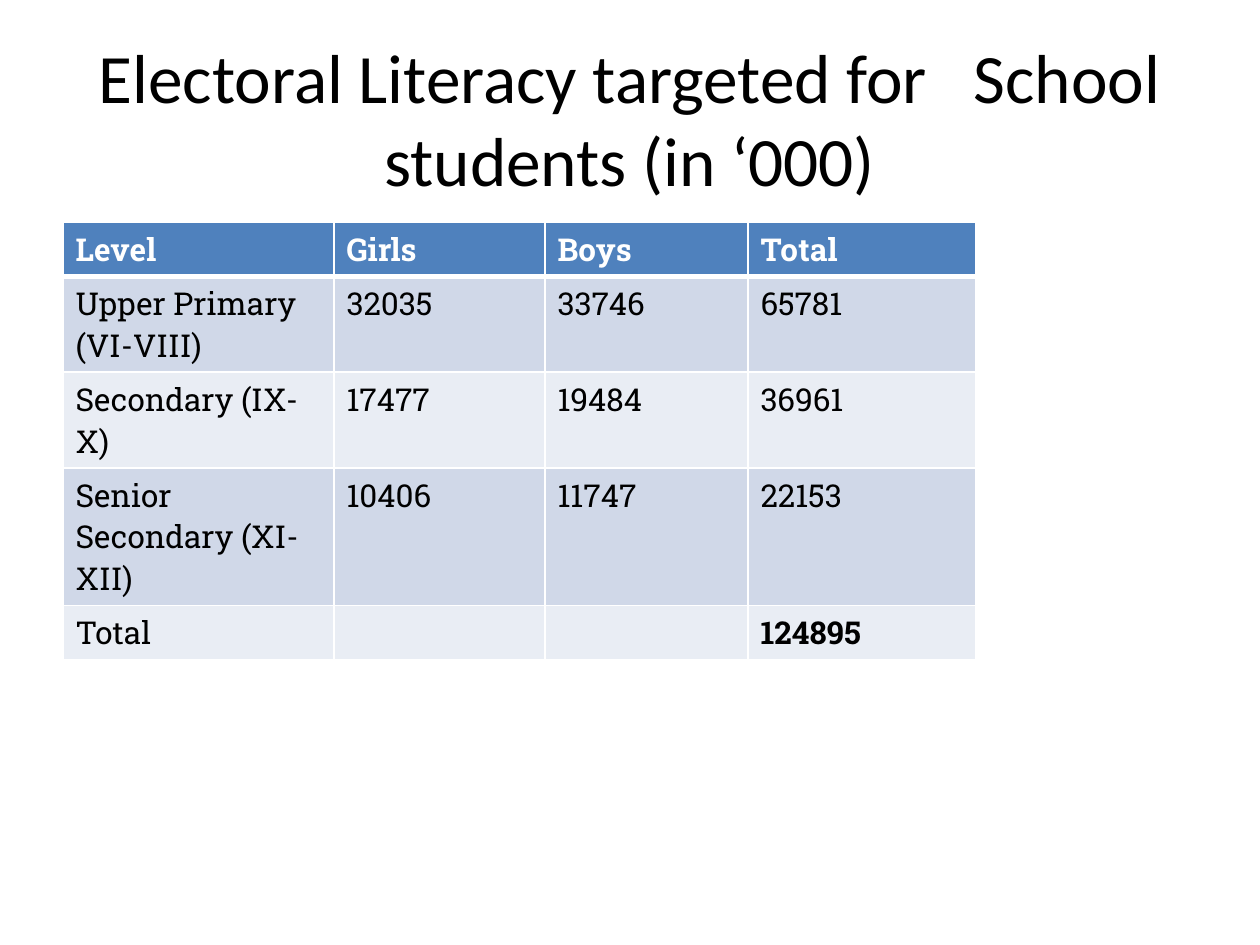
from lxml import etree
from pptx import Presentation
from pptx import util as u
from pptx.dml.color import RGBColor
from pptx.enum import text
from pptx.oxml import ns

SCALE = 914400 // 126
TITLE_FONT = "Calibri"
TABLE_FONT = "Roboto Slab"
WHITE = RGBColor(0xFF, 0xFF, 0xFF)
BLACK = RGBColor(0x00, 0x00, 0x00)
HEADER_BLUE = RGBColor(0x4F, 0x81, 0xBD)
BANDS = [RGBColor(0xD0, 0xD8, 0xE8), RGBColor(0xE9, 0xED, 0xF4)]

TITLE = "Electoral Literacy targeted for   School students (in ‘000)"
COLUMN_WIDTHS = [271, 211, 203, 228]
ROW_HEIGHT = 52
ROWS = [
    ["Level", "Girls", "Boys", "Total"],
    ["Upper Primary (VI-VIII)", "32035", "33746", "65781"],
    ["Secondary (IX-X)", "17477", "19484", "36961"],
    ["Senior Secondary (XI-XII)", "10406", "11747", "22153"],
    ["Total", "", "", "124895"],
]


def px(length):
    return u.Emu(length * SCALE)


def format_font(font, name, size, color, bold=False):
    font.name = name
    font.size = u.Pt(size)
    font.color.rgb = color
    font.bold = bold


def set_borders(cell, bottom_width):
    properties = cell._tc.get_or_add_tcPr()
    widths = {"lnL": 1, "lnR": 1, "lnT": 1, "lnB": bottom_width}
    for index, (side, width) in enumerate(widths.items()):
        line = etree.Element(ns.qn(f"a:{side}"), w=str(u.Pt(width)))
        fill = etree.SubElement(line, ns.qn("a:solidFill"))
        etree.SubElement(fill, ns.qn("a:srgbClr"), val=str(WHITE))
        properties.insert(index, line)


def add_title(slide, left, top, width, height):
    title = slide.shapes.title
    title.left, title.top = px(left), px(top)
    title.width, title.height = px(width), px(height)
    frame = title.text_frame
    frame.word_wrap = True
    frame.auto_size = text.MSO_AUTO_SIZE.NONE
    frame.vertical_anchor = text.MSO_ANCHOR.MIDDLE
    paragraph = frame.paragraphs[0]
    paragraph.alignment = text.PP_ALIGN.CENTER
    run = paragraph.add_run()
    run.text = TITLE
    format_font(run.font, TITLE_FONT, 39.6, BLACK)


def fill_cell(cell, value, fill, color, bold, bottom_width):
    cell.fill.solid()
    cell.fill.fore_color.rgb = fill
    set_borders(cell, bottom_width)
    paragraph = cell.text_frame.paragraphs[0]
    if value:
        run = paragraph.add_run()
        run.text = value
        format_font(run.font, TABLE_FONT, 18, color, bold)
    else:
        format_font(paragraph.font, TABLE_FONT, 18, color)


def add_student_table(slide, left, top, width, height):
    shape = slide.shapes.add_table(
        len(ROWS), len(COLUMN_WIDTHS), px(left), px(top), px(width), px(height))
    table = shape.table
    for column, column_width in zip(table.columns, COLUMN_WIDTHS):
        column.width = px(column_width)
    for row in table.rows:
        row.height = px(ROW_HEIGHT)
    shape.height = px(height)
    for row_index, values in enumerate(ROWS):
        header = row_index == 0
        fill = HEADER_BLUE if header else BANDS[(row_index - 1) % 2]
        color = WHITE if header else BLACK
        for column_index, value in enumerate(values):
            grand_total = row_index == len(ROWS) - 1 and column_index > 0
            fill_cell(table.cell(row_index, column_index), value, fill, color,
                      header or grand_total, 3 if header else 1)
            if row_index == 1:
                top_line = table.cell(1, column_index)._tc.tcPr.find(ns.qn("a:lnT"))
                top_line.set("w", str(u.Pt(3)))


def main():
    presentation = Presentation()
    presentation.slide_width = px(1260)
    presentation.slide_height = px(945)
    slide = presentation.slides.add_slide(presentation.slide_layouts[5])
    add_title(slide, 63, 38, 1134, 158)
    add_student_table(slide, 63, 222, sum(COLUMN_WIDTHS), 330)
    presentation.save("out.pptx")


if __name__ == "__main__":
    main()
